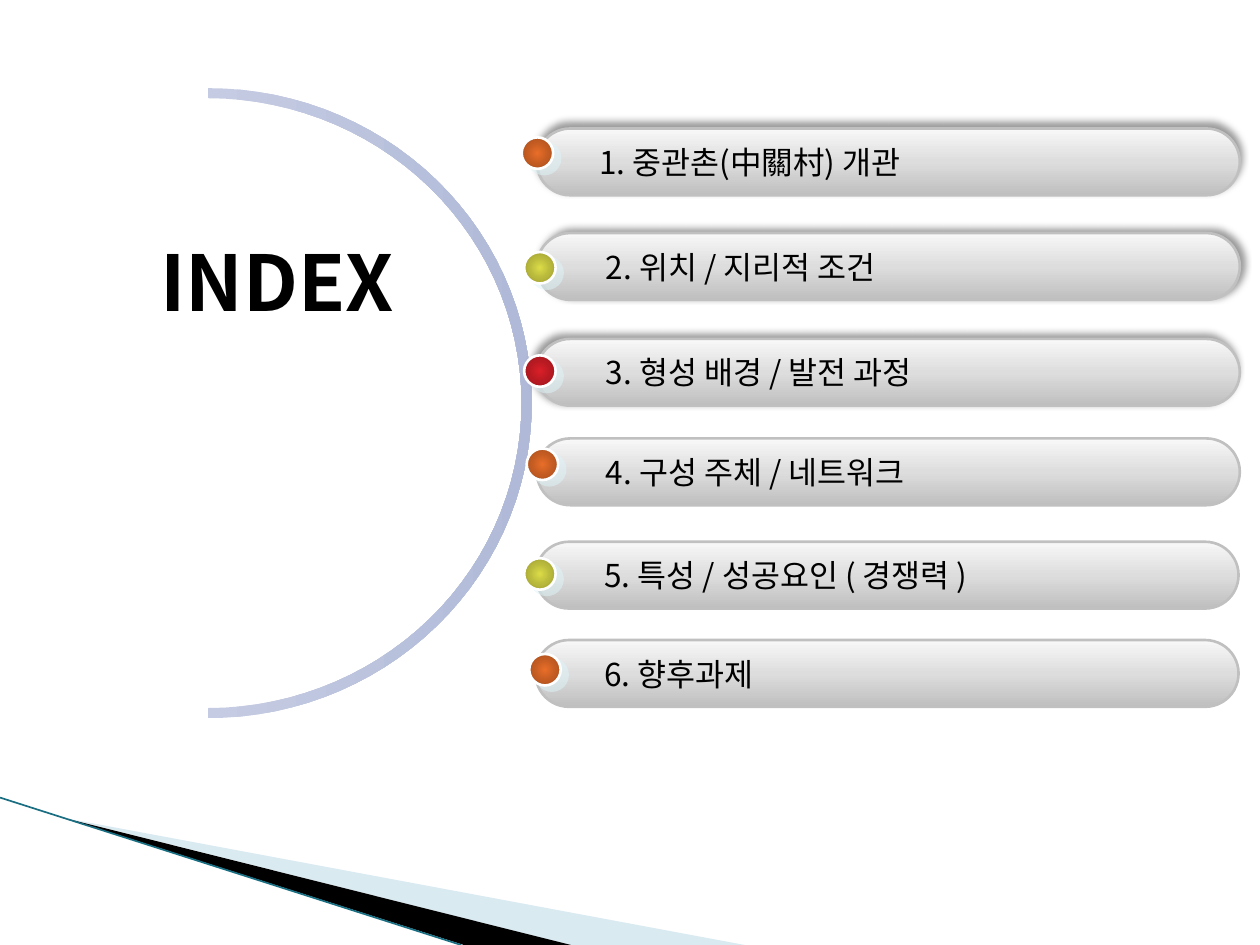
from dataclasses import dataclass
from math import cos, pi, sin

from lxml import etree
from pptx import Presentation
from pptx.dml.color import RGBColor
from pptx.enum.shapes import MSO_CONNECTOR, MSO_SHAPE
from pptx.enum.text import MSO_ANCHOR, MSO_AUTO_SIZE, PP_ALIGN
from pptx.oxml.ns import qn
from pptx.util import Inches, Pt

PILL, DOT = MSO_SHAPE.ROUNDED_RECTANGLE, MSO_SHAPE.OVAL
STRAIGHT = MSO_CONNECTOR.STRAIGHT
MIDDLE, LEFT = MSO_ANCHOR.MIDDLE, PP_ALIGN.LEFT
NO_AUTOFIT = MSO_AUTO_SIZE.NONE


@dataclass(frozen=True)
class Theme:
    font: str = "Noto Sans CJK KR"
    title_size: int = 44
    item_size: int = 18
    ink: str = "000000"
    bar: tuple = ("F8F8F8", "DDDDDD", "BFBFBF")
    bar_edge: str = "C0C0C0"
    dot_edge: str = "FFFFFF"
    dot_shadow: str = "DEF5FA"
    orange: tuple = ("E96E29", "C35C22", "98481B")
    yellow: tuple = ("DCDC48", "B8B83C", "8F8F2F")
    red: tuple = ("DA1F28", "B71A22", "8E141A")
    arc: tuple = ("C5CBE2", "B0BAD8")
    wedge: str = "A0CBDC"
    wedge_line: str = "1A6E82"


THEME = Theme()


def add_xml(parent, tag, **attributes):
    return etree.SubElement(parent, qn(tag), {k: str(v) for k, v in attributes.items()})


class IndexSlide:
    def __init__(self, slide, theme):
        self.slide = slide
        self.shapes = slide.shapes
        self.theme = theme

    def font(self, paragraph, size, bold=False):
        font = paragraph.font
        font.name, font.size, font.bold = self.theme.font, Pt(size), bold
        font.color.rgb = RGBColor.from_string(self.theme.ink)
        for run in paragraph.runs:
            add_xml(run._r.get_or_add_rPr(), "a:ea", typeface=self.theme.font)

    def gradient(self, shape, colors, angle=None):
        """Spread the colours evenly, along an angle or outward from the centre."""
        shape.fill.gradient()
        gradient = shape._element.spPr.find(qn("a:gradFill"))
        for child in list(gradient):
            gradient.remove(child)
        stops = add_xml(gradient, "a:gsLst")
        for index, color in enumerate(colors):
            stop = add_xml(stops, "a:gs", pos=100000 * index // (len(colors) - 1))
            add_xml(stop, "a:srgbClr", val=color)
        if angle is None:
            center = add_xml(gradient, "a:path", path="circle")
            add_xml(center, "a:fillToRect", l=50000, t=50000, r=50000, b=50000)
        else:
            add_xml(gradient, "a:lin", ang=angle * 60000, scaled=0)

    def shadow(self, shape, color, alpha, blur, distance, direction):
        effects = shape._element.spPr.find(qn("a:effectLst"))
        outer = add_xml(effects, "a:outerShdw", blurRad=Pt(blur), dist=Pt(distance),
                        dir=direction * 60000, algn="ctr", rotWithShape=0)
        tint = add_xml(outer, "a:srgbClr", val=color)
        add_xml(tint, "a:alpha", val=alpha * 1000)

    def outlined(self, kind, left, top, width, height, edge):
        shape = self.shapes.add_shape(kind, Inches(left), Inches(top),
                                      Inches(width), Inches(height))
        shape.shadow.inherit = False
        shape.line.color.rgb = RGBColor.from_string(edge)
        shape.line.width = Pt(1.5)
        return shape

    def outline(self, points):
        """Closed borderless polygon through points given in inches."""
        corners = [(Inches(x), Inches(y)) for x, y in points]
        builder = self.shapes.build_freeform(*corners[0])
        builder.add_line_segments(corners[1:], close=True)
        shape = builder.convert_to_shape()
        shape.shadow.inherit = False
        shape.line.fill.background()
        return shape

    def wedge(self, points, color, alpha=100):
        shape = self.outline(points)
        shape.fill.solid()
        shape.fill.fore_color.rgb = RGBColor.from_string(color)
        tint = shape._element.spPr.find(qn("a:solidFill"))[0]
        add_xml(tint, "a:alpha", val=alpha * 1000)

    def line(self, start, end, color, width):
        connector = self.shapes.add_connector(
            STRAIGHT, *(Inches(value) for value in start + end))
        connector.line.color.rgb = RGBColor.from_string(color)
        connector.line.width = Pt(width)
        add_xml(connector._element.spPr, "a:effectLst")

    def arc(self, center, outer, inner, steps=60):
        """Right half of an elliptical ring; outer and inner are radius pairs."""
        angles = [pi * step / steps - pi / 2 for step in range(steps + 1)]

        def edge(radii, sweep):
            return [(center[0] + radii[0] * cos(a), center[1] + radii[1] * sin(a))
                    for a in sweep]

        ring = self.outline(edge(outer, angles) + edge(inner, reversed(angles)))
        self.gradient(ring, self.theme.arc, 0)

    def title(self, text, left, top, width, height):
        title = self.shapes.title
        title.left, title.top = Inches(left), Inches(top)
        title.width, title.height = Inches(width), Inches(height)
        frame = title.text_frame
        frame.text = text
        frame.auto_size = NO_AUTOFIT
        frame.vertical_anchor = MIDDLE
        frame.paragraphs[0].alignment = LEFT
        self.font(frame.paragraphs[0], self.theme.title_size, bold=True)

    def bar(self, text, left, top, indent, shadow_direction):
        bar = self.outlined(PILL, left, top, 5.58, 0.53, self.theme.bar_edge)
        bar.adjustments[0] = 0.5
        self.gradient(bar, self.theme.bar, 90)
        if shadow_direction is not None:
            self.shadow(bar, self.theme.ink, 40, 4, 3, shadow_direction)
        frame = bar.text_frame
        frame.word_wrap = True
        frame.vertical_anchor = MIDDLE
        # The pill's text area starts 0.08 inches inside its left edge.
        frame.margin_left = Inches(indent - 0.08)
        frame.text = text
        frame.paragraphs[0].alignment = LEFT
        self.font(frame.paragraphs[0], self.theme.item_size)

    def dot(self, left, top, colors):
        dot = self.outlined(DOT, left, top, 0.25, 0.25, self.theme.dot_edge)
        self.gradient(dot, colors)
        self.shadow(dot, self.theme.dot_shadow, 50, 0, 5, 37)


def main():
    presentation = Presentation()
    presentation.slide_width, presentation.slide_height = Inches(10), Inches(7.5)
    index = IndexSlide(presentation.slides.add_slide(presentation.slide_layouts[5]), THEME)

    index.wedge([(0.55, 6.5), (5.91, 7.5), (4.53, 7.5)], THEME.wedge, alpha=40)
    index.wedge([(0.54, 6.5), (4.53, 7.5), (3.68, 7.5)], THEME.ink)
    index.line((0, 6.33), (3.66, 7.5), THEME.wedge_line, 0.95)
    index.arc((1.65, 3.2), outer=(2.57, 2.5), inner=(2.49, 2.42))
    index.title("INDEX", 1.17, 1.81, 2.66, 0.84)

    # text, bar left, bar top, text indent, shadow direction, dot left, dot top, dot colours
    items = [
        ("1. 중관촌(中關村) 개관", 4.26, 1.02, 0.5, 270, 4.14, 1.09, THEME.orange),
        ("2. 위치 / 지리적 조건", 4.26, 1.85, 0.55, 315, 4.16, 2, THEME.yellow),
        ("3. 형성 배경 / 발전 과정", 4.26, 2.69, 0.55, 225, 4.16, 2.82, THEME.red),
        ("4. 구성 주체 / 네트워크", 4.26, 3.48, 0.55, None, 4.18, 3.56, THEME.orange),
        ("5. 특성 / 성공요인 ( 경쟁력 )", 4.25, 4.3, 0.55, None, 4.16, 4.43, THEME.yellow),
        ("6. 향후과제", 4.25, 5.08, 0.55, None, 4.2, 5.19, THEME.orange),
    ]
    for text, left, top, indent, direction, dot_left, dot_top, colors in items:
        index.bar(text, left, top, indent, direction)
        index.dot(dot_left, dot_top, colors)

    presentation.save("out.pptx")


if __name__ == "__main__":
    main()
